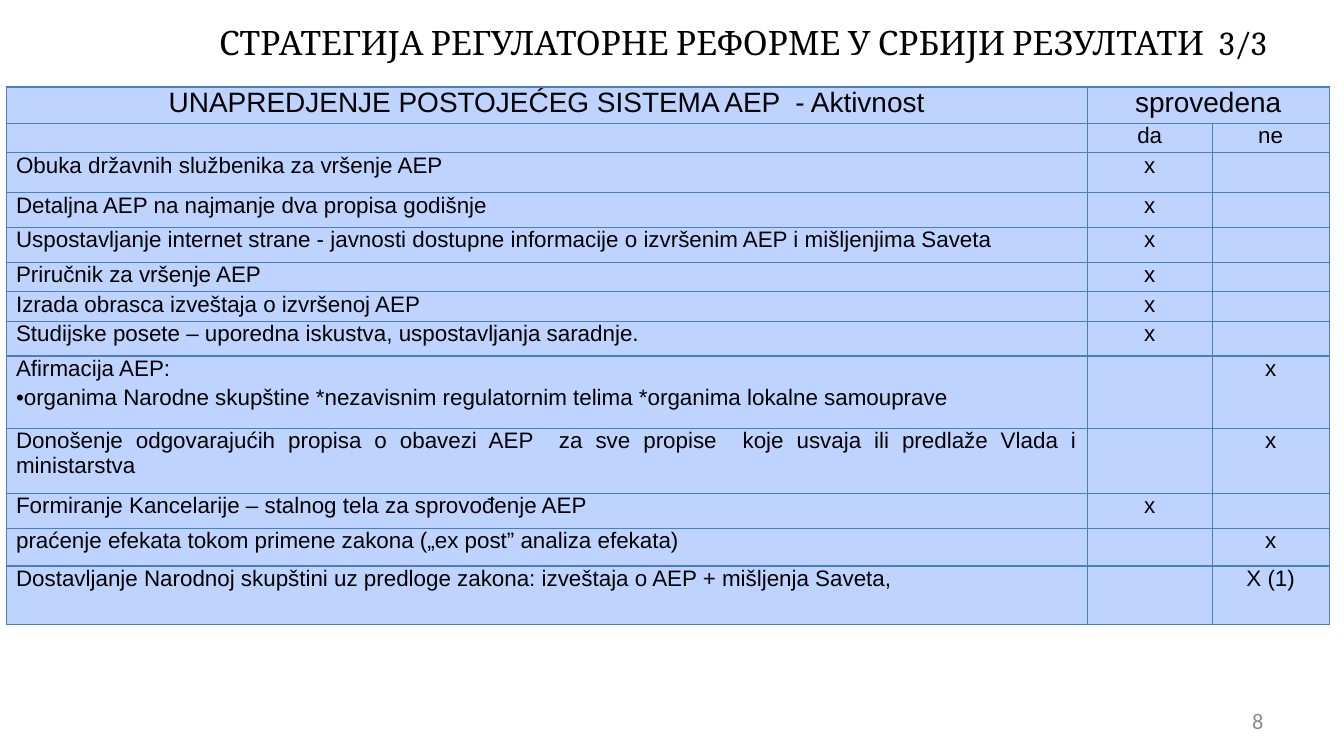
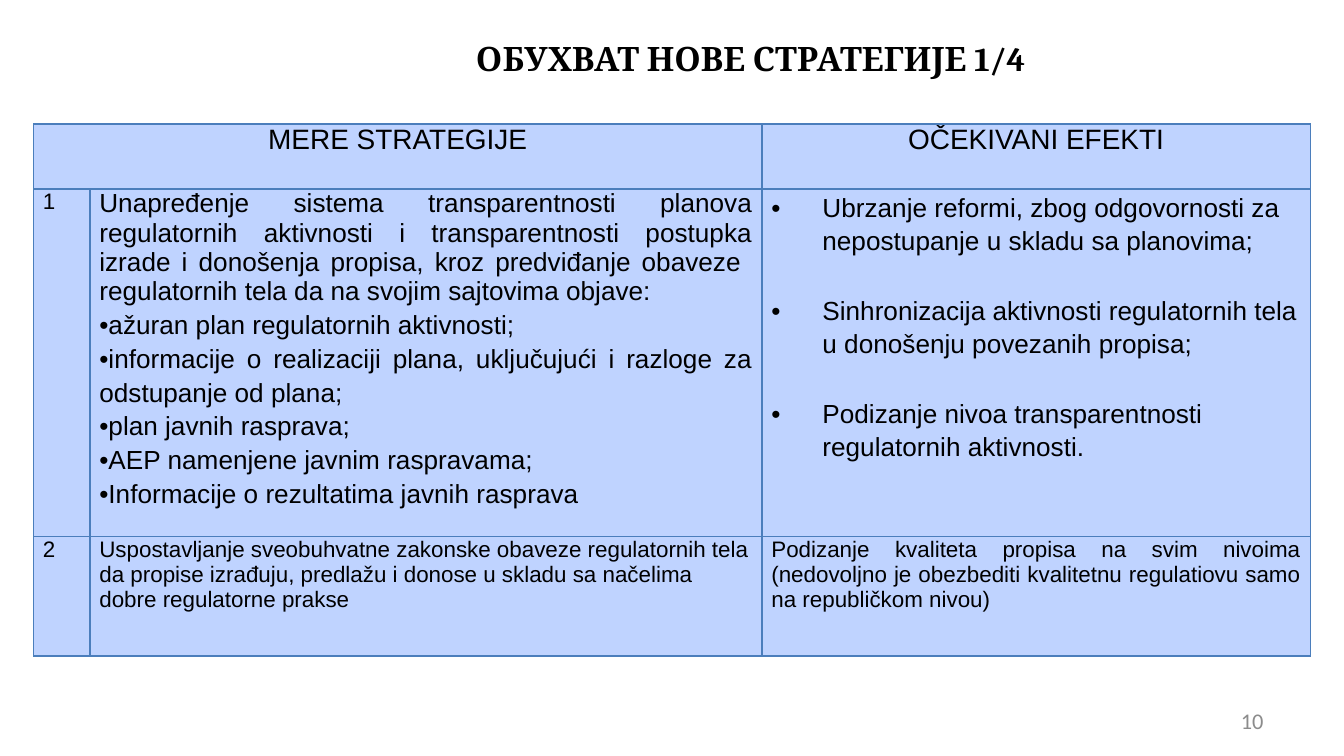
from lxml import etree
from pptx import Presentation
from pptx.dml.color import RGBColor
from pptx.enum.text import MSO_ANCHOR, MSO_AUTO_SIZE, PP_ALIGN
from pptx.oxml.ns import qn
from pptx.util import Inches, Pt

LEFT, CENTER, RIGHT, JUSTIFY = PP_ALIGN.LEFT, PP_ALIGN.CENTER, PP_ALIGN.RIGHT, PP_ALIGN.JUSTIFY
TOP, MIDDLE = MSO_ANCHOR.TOP, MSO_ANCHOR.MIDDLE
TITLE_ONLY = 5

BLACK, GREY, CELL_BLUE, BORDER_BLUE = "000000", "8C8C8C", "BFD3FF", "4B7EBC"
TITLE_FONT, TABLE_FONT, NUMBER_FONT = "Cambria", "Arial", "Calibri"
HEADER_SIZE, LARGE_SIZE, BODY_SIZE = 15, 14, 12

presentation = Presentation()
presentation.slide_width, presentation.slide_height = Inches(10), Inches(5.625)
# Grid: one hundredth of the slide's width and height
COLUMN = presentation.slide_width / 100
ROW = presentation.slide_height / 100
HANGING_INDENT = int(3.8 * COLUMN)
BULLET_GAP = 19


def color(value):
    return RGBColor.from_string(value)


def write_cell(cell, paragraphs, size, alignment):
    """Paragraphs that start with • get a bullet; left-aligned ones hang and are spaced."""
    cell.margin_left = cell.margin_right = Inches(0.07)
    cell.margin_top = cell.margin_bottom = 0
    properties = cell._tc.get_or_add_tcPr()
    for side in ("a:lnL", "a:lnR", "a:lnT", "a:lnB"):
        line = etree.SubElement(properties, qn(side), w=str(Pt(0.75)))
        fill = etree.SubElement(line, qn("a:solidFill"))
        etree.SubElement(fill, qn("a:srgbClr"), val=BORDER_BLUE)
    cell.fill.solid()
    cell.fill.fore_color.rgb = color(CELL_BLUE)
    frame = cell.text_frame
    for index, text in enumerate(paragraphs or [""]):
        paragraph = frame.add_paragraph() if index else frame.paragraphs[0]
        paragraph.alignment = alignment
        if text.startswith("•"):
            hang = HANGING_INDENT if alignment == LEFT else 0
            paragraph.line_spacing = 1.15
            if hang and index:
                paragraph.space_before = Pt(BULLET_GAP)
            settings = paragraph._p.get_or_add_pPr()
            settings.set("marL", str(hang))
            settings.set("indent", str(-hang))
            etree.SubElement(settings, qn("a:buFont"), typeface=TABLE_FONT)
            etree.SubElement(settings, qn("a:buChar"), char="•")
        if text:
            paragraph.add_run().text = text.lstrip("•")
        else:
            etree.SubElement(paragraph._p, qn("a:endParaRPr"), sz=str(size * 100))
        paragraph.font.size = Pt(size)
        paragraph.font.name = TABLE_FONT
        paragraph.font.color.rgb = color(BLACK)


# Results: activity, mark under "da", mark under "ne"
activities = [
    (["Obuka državnih službenika za vršenje AEP"], "x", ""),
    (["Detaljna AEP na najmanje dva propisa godišnje"], "x", ""),
    (["Uspostavljanje internet strane - javnosti dostupne informacije o izvršenim AEP "
      "i mišljenjima Saveta"], "x", ""),
    (["Priručnik za vršenje AEP"], "x", ""),
    (["Izrada obrasca izveštaja o izvršenoj AEP"], "x", ""),
    (["Studijske posete – uporedna iskustva, uspostavljanja saradnje."], "x", ""),
    (["Afirmacija AEP:",
      "•organima Narodne skupštine *nezavisnim regulatornim telima "
      "*organima lokalne samouprave"], "", "x"),
    (["Donošenje odgovarajućih propisa o obavezi AEP  za sve propise  koje usvaja "
      "ili predlaže Vlada i ministarstva"], "", "x"),
    (["Formiranje Kancelarije – stalnog tela za sprovođenje AEP"], "x", ""),
    (["praćenje efekata tokom primene zakona („ex post” analiza efekata)"], "", "x"),
    (["Dostavljanje Narodnoj skupštini uz predloge zakona: izveštaja o AEP + "
      "mišljenja Saveta,"], "", "X (1)"),
]
results = [
    [(["UNAPREDJENJE POSTOJEĆEG SISTEMA AEP  - Aktivnost"], HEADER_SIZE, CENTER),
     (["sprovedena"], HEADER_SIZE, CENTER), ([], HEADER_SIZE, CENTER)],
    [([], BODY_SIZE, CENTER), (["da"], BODY_SIZE, CENTER), (["ne"], BODY_SIZE, CENTER)],
]
for activity, done, not_done in activities:
    results.append([(activity, BODY_SIZE, JUSTIFY),
                    ([done], BODY_SIZE, CENTER), ([not_done], BODY_SIZE, CENTER)])

# Measures of the new strategy and their expected effects
measures = [
    [(["MERE STRATEGIJE"], HEADER_SIZE, CENTER), ([], HEADER_SIZE, CENTER),
     (["OČEKIVANI EFEKTI"], HEADER_SIZE, CENTER)],
    [(["1"], BODY_SIZE, JUSTIFY),
     (["Unapređenje sistema transparentnosti planova regulatornih aktivnosti i "
       "transparentnosti postupka izrade i donošenja propisa, kroz predviđanje obaveze  "
       "regulatornih tela da na svojim sajtovima objave:",
       "•ažuran plan regulatornih aktivnosti;",
       "•informacije o realizaciji plana, uključujući i razloge za odstupanje od plana;",
       "•plan javnih rasprava;",
       "•AEP namenjene javnim raspravama;",
       "•Informacije o rezultatima javnih rasprava"], LARGE_SIZE, JUSTIFY),
     (["•Ubrzanje reformi, zbog odgovornosti za nepostupanje u skladu sa planovima;",
       "•Sinhronizacija aktivnosti regulatornih tela u donošenju povezanih propisa;",
       "•Podizanje nivoa transparentnosti regulatornih aktivnosti."], LARGE_SIZE, LEFT)],
    [(["2"], BODY_SIZE, JUSTIFY),
     (["Uspostavljanje sveobuhvatne zakonske obaveze regulatornih tela da propise izrađuju, "
       "predlažu i donose u skladu sa načelima dobre regulatorne prakse"], BODY_SIZE, LEFT),
     (["Podizanje kvaliteta propisa na svim nivoima (nedovoljno je obezbediti kvalitetnu "
       "regulatiovu samo na republičkom nivou)"], BODY_SIZE, JUSTIFY)],
]

# Positions, column widths and row heights are in grid units
pages = [
    {"title": "СТРАТЕГИЈА РЕГУЛАТОРНЕ РЕФОРМЕ У СРБИЈИ РЕЗУЛТАТИ  3/3",
     "title_at": (15.3, 2), "title_alignment": LEFT, "bold": False, "number": "8",
     "table_at": (0.5, 11.5), "widths": [80.4, 9.3, 8.7],
     "heights": [4.8, 3.9, 5.3, 4.6, 4.6, 3.9, 3.9, 4.6, 9.6, 8.6, 4.6, 5, 7.7],
     "cells": results, "merged": (1, 2)},
    {"title": "ОБУХВАТ НОВЕ СТРАТЕГИЈЕ 1/4",
     "title_at": (11.7, 4.1), "title_alignment": CENTER, "bold": True, "number": "10",
     "table_at": (2.5, 16.4), "widths": [4.2, 50, 40.8],
     "heights": [8.6, 46, 15.8],
     "cells": measures, "merged": (0, 1)},
]

for page in pages:
    slide = presentation.slides.add_slide(presentation.slide_layouts[TITLE_ONLY])

    # Table
    left, top = page["table_at"]
    widths, heights = page["widths"], page["heights"]
    table = slide.shapes.add_table(
        len(heights), len(widths), int(left * COLUMN), int(top * ROW),
        int(sum(widths) * COLUMN), int(sum(heights) * ROW)).table
    table.first_row = table.horz_banding = False
    for table_column, width in zip(table.columns, widths):
        table_column.width = int(width * COLUMN)
    for table_row, height, contents in zip(table.rows, heights, page["cells"]):
        table_row.height = int(height * ROW)
        for cell, content in zip(table_row.cells, contents):
            write_cell(cell, *content)
    first, last = page["merged"]
    table.cell(0, first).merge(table.cell(0, last))

    # Title and page number
    title = slide.shapes.title
    left, top = page["title_at"]
    title.left, title.top = int(left * COLUMN), int(top * ROW)
    title.width, title.height = int(88.3 * COLUMN), int(14.8 * ROW)
    number = slide.shapes.add_textbox(int(71.7 * COLUMN), int(92.6 * ROW),
                                      int(23.3 * COLUMN), int(5.3 * ROW))
    for shape, text, anchor, alignment, font_name, size, ink, bold in (
            (title, page["title"], TOP, page["title_alignment"], TITLE_FONT, 18, BLACK,
             page["bold"]),
            (number, page["number"], MIDDLE, RIGHT, NUMBER_FONT, 12, GREY, False)):
        frame = shape.text_frame
        frame.word_wrap = True
        frame.auto_size = MSO_AUTO_SIZE.NONE
        frame.vertical_anchor = anchor
        frame.text = text
        paragraph = frame.paragraphs[0]
        paragraph.alignment = alignment
        paragraph.font.name = font_name
        paragraph.font.size = Pt(size)
        paragraph.font.bold = bold
        paragraph.font.color.rgb = color(ink)

presentation.save("out.pptx")
